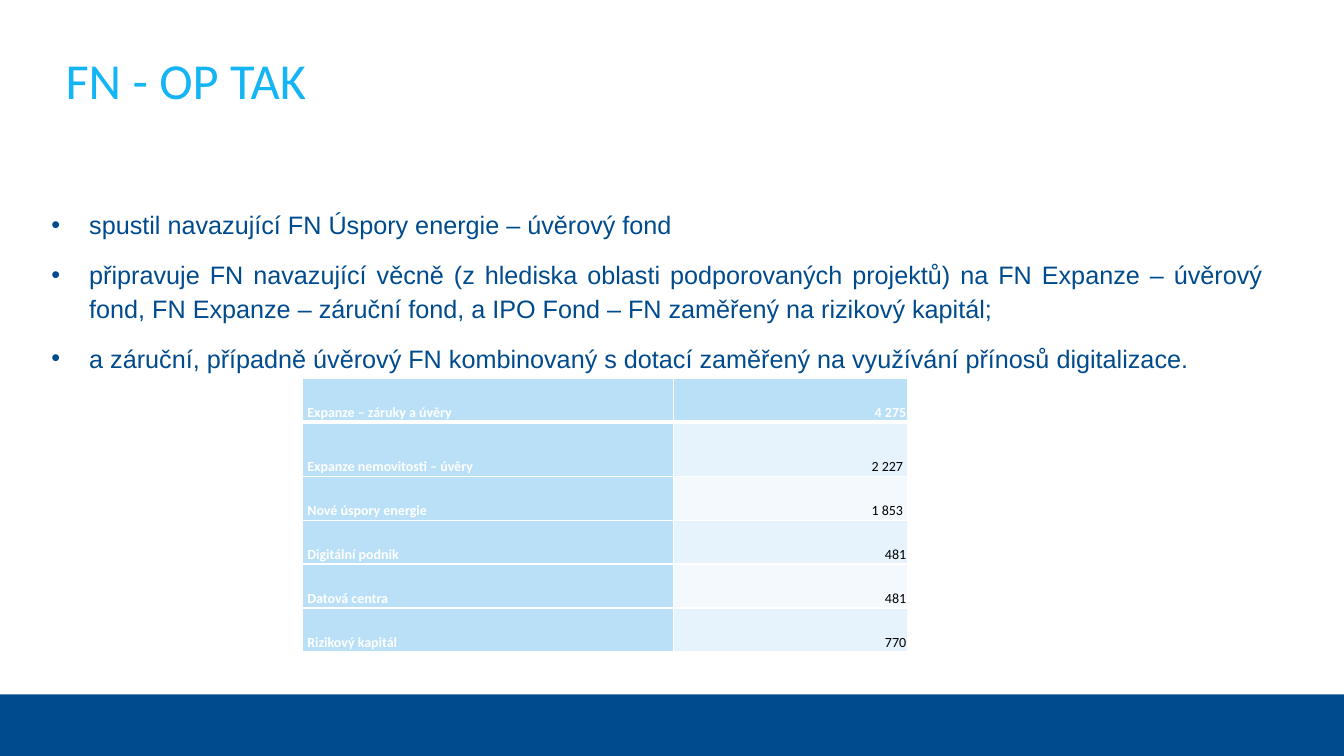
"""Build the FN - OP TAK slide with its bullet list and table of funds."""
from lxml.etree import SubElement
from pptx import Presentation
from pptx.dml.color import RGBColor
from pptx.enum.shapes import MSO_SHAPE
from pptx.enum.text import MSO_ANCHOR, PP_ALIGN
from pptx.oxml import parse_xml
from pptx.oxml.ns import nsdecls, qn
from pptx.util import Pt

TITLE = "FN - OP TAK"
BULLETS = [
    "spustil navazující FN Úspory energie – úvěrový fond",
    "připravuje FN navazující věcně (z hlediska oblasti podporovaných projektů) na FN Expanze – úvěrový "
    "fond, FN Expanze – záruční fond, a IPO Fond – FN zaměřený na rizikový kapitál; ",
    "a záruční, případně úvěrový FN kombinovaný s dotací zaměřený na využívání přínosů digitalizace. ",
]
FUNDS = [
    ("Expanze – záruky a úvěry", "4 275"),
    ("Expanze nemovitosti – úvěry", "2 227 "),
    ("Nové úspory energie", "1 853 "),
    ("Digitální podnik", "481"),
    ("Datová centra", "481"),
    ("Rizikový kapitál", "770"),
]

NAVY = RGBColor(0x00, 0x4B, 0x8D)
CYAN = RGBColor(0x13, 0xB5, 0xF4)
WHITE = RGBColor(0xFF, 0xFF, 0xFF)
BLACK = RGBColor(0x00, 0x00, 0x00)
HEAD_BLUE = RGBColor(0xB9, 0xE0, 0xF7)
BANDS = [RGBColor(0xF3, 0xF9, 0xFD), RGBColor(0xE6, 0xF3, 0xFC)]

SLIDE_WIDTH, SLIDE_HEIGHT = 960, 540
PANEL_HEIGHT = 496
COLUMN_WIDTHS = [265, 167]
ROW_HEIGHT, TALL_ROW_HEIGHT = 31.4, 38.8
TALL_ROW = 1
BULLET_INDENT = 27


def set_font(para, name, size, color, bold=False):
    para.font.name = name
    para.font.size = Pt(size)
    para.font.color.rgb = color
    para.font.bold = bold


def add_box(page, left, top, width, height, inset_top=0):
    box = page.shapes.add_textbox(Pt(left), Pt(top), Pt(width), Pt(height))
    frame = box.text_frame
    frame.word_wrap = True
    frame.margin_left = frame.margin_right = frame.margin_bottom = 0
    frame.margin_top = Pt(inset_top)
    return frame


def add_bullet(para):
    properties = para._p.get_or_add_pPr()
    properties.set("marL", str(Pt(BULLET_INDENT)))
    properties.set("indent", str(-Pt(BULLET_INDENT)))
    SubElement(properties, qn("a:buFont")).set("typeface", "Arial")
    SubElement(properties, qn("a:buChar")).set("char", "•")


def set_borders(cell, bottom_width):
    widths = {"lnL": 1, "lnR": 1, "lnT": 1, "lnB": bottom_width}
    for place, (side, width) in enumerate(widths.items()):
        line = parse_xml(
            f'<a:{side} {nsdecls("a")} w="{Pt(width)}"><a:solidFill>'
            f'<a:srgbClr val="{WHITE}"/></a:solidFill></a:{side}>'
        )
        cell._tc.get_or_add_tcPr().insert(place, line)


def fill_cell(cell, text, row, column):
    is_head = row == 0 or column == 0
    cell.fill.solid()
    cell.fill.fore_color.rgb = HEAD_BLUE if is_head else BANDS[row % 2]
    set_borders(cell, 3 if row == 0 else 1)
    cell.vertical_anchor = MSO_ANCHOR.BOTTOM
    cell.margin_left = cell.margin_right = Pt(0.75)
    cell.margin_top = cell.margin_bottom = Pt(0.75)
    para = cell.text_frame.paragraphs[0]
    para.text = text
    para.alignment = PP_ALIGN.RIGHT if column else PP_ALIGN.LEFT
    para.line_spacing = 1.07
    para._p.get_or_add_pPr().set("marL", str(Pt(2.8)))
    set_font(para, "Calibri", 10, WHITE if is_head else BLACK, is_head)


def add_fund_table(page):
    heights = [TALL_ROW_HEIGHT if row == TALL_ROW else ROW_HEIGHT for row in range(len(FUNDS))]
    table = page.shapes.add_table(
        len(FUNDS), len(COLUMN_WIDTHS), Pt(216), Pt(270), Pt(sum(COLUMN_WIDTHS)), Pt(sum(heights))
    ).table
    table.first_row = table.horz_banding = False
    for column, width in enumerate(COLUMN_WIDTHS):
        table.columns[column].width = Pt(width)
    for row, fund in enumerate(FUNDS):
        table.rows[row].height = Pt(heights[row])
        for column, text in enumerate(fund):
            fill_cell(table.cell(row, column), text, row, column)


def main():
    deck = Presentation()
    deck.slide_width, deck.slide_height = Pt(SLIDE_WIDTH), Pt(SLIDE_HEIGHT)
    page = deck.slides.add_slide(deck.slide_layouts[6])
    page.background.fill.solid()
    page.background.fill.fore_color.rgb = NAVY

    panel = page.shapes.add_shape(MSO_SHAPE.RECTANGLE, 0, 0, Pt(SLIDE_WIDTH), Pt(PANEL_HEIGHT))
    panel.shadow.inherit = False
    panel.fill.solid()
    panel.fill.fore_color.rgb = WHITE
    panel.line.fill.background()

    title = add_box(page, 46.8, 35.3, 865.4, 43.9).paragraphs[0]
    title.text = TITLE
    set_font(title, "Calibri", 36, CYAN)

    body = add_box(page, 36.7, 119.5, 865.4, 399.6, inset_top=28)
    for index, text in enumerate(BULLETS):
        para = body.add_paragraph() if index else body.paragraphs[0]
        para.text = text
        para.alignment = PP_ALIGN.JUSTIFY
        para.line_spacing = 1.1
        para.space_before = Pt(6 if index else 0)
        para.space_after = Pt(6)
        add_bullet(para)
        set_font(para, "Arial", 18, NAVY)

    add_fund_table(page)
    deck.save("out.pptx")


if __name__ == "__main__":
    main()
